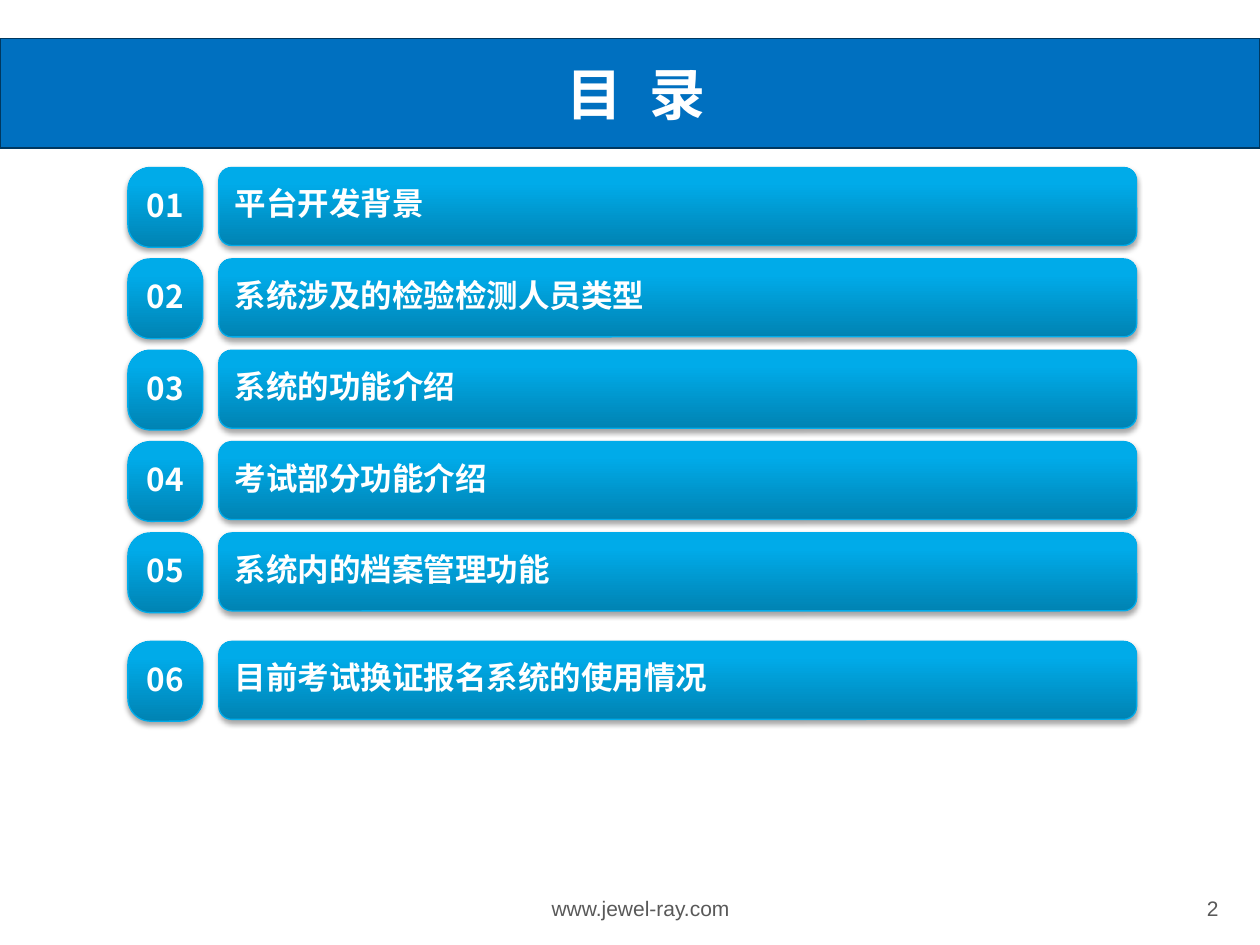
from lxml import etree
from pptx import Presentation
from pptx.dml.color import RGBColor
from pptx.enum.shapes import MSO_SHAPE
from pptx.enum.text import MSO_ANCHOR, PP_ALIGN
from pptx.oxml import parse_xml
from pptx.oxml.ns import nsdecls, qn
from pptx.util import Pt

RECT, ROUNDED = MSO_SHAPE.RECTANGLE, MSO_SHAPE.ROUNDED_RECTANGLE
MIDDLE, BOTTOM = MSO_ANCHOR.MIDDLE, MSO_ANCHOR.BOTTOM
LEFT, CENTER, RIGHT = PP_ALIGN.LEFT, PP_ALIGN.CENTER, PP_ALIGN.RIGHT

WHITE = RGBColor(0xFF, 0xFF, 0xFF)
GREY = RGBColor(0x59, 0x59, 0x59)
BAND_FILL = RGBColor(0x00, 0x70, 0xC0)
BAND_LINE = RGBColor(0x00, 0x38, 0x60)
TILE_LINE = RGBColor(0x00, 0xAC, 0xEB)
TILE_STOPS = [
    (0, RGBColor(0x00, 0x83, 0xB3)),
    (80, RGBColor(0x00, 0xAB, 0xE9)),
    (100, RGBColor(0x00, 0xAB, 0xEA)),
]

SANS, CJK, DISPLAY = "Arial", "Noto Sans CJK SC", "Montserrat"

TITLE = ["目", " ", "录"]
TITLE_GAP = Pt(8)
TOPICS = [
    ("平台开发背景", SANS),
    ("系统涉及的检验检测人员类型", SANS),
    ("系统的功能介绍", SANS),
    ("考试部分功能介绍", CJK),
    ("系统内的档案管理功能", CJK),
    ("目前考试换证报名系统的使用情况", CJK),
]
FOOTERS = [
    ("www.jewel-ray.com", CENTER, (253.4, 508.3, 225.4, 21.6)),
    ("2", RIGHT, (669.6, 507.6, 33.8, 22.3)),
]

PAGE_WIDTH, PAGE_HEIGHT = 720, 540
FIRST_TOP, ROW_PITCH, LAST_ROW_GAP = 95.7, 52.2, 9.8
NUMBER_LEFT, NUMBER_WIDTH, NUMBER_HEIGHT = 73.1, 42.8, 45.6
BAR_LEFT, BAR_WIDTH, BAR_HEIGHT = 125, 524.5, 44.6


def place(left, top, width, height):
    return Pt(left), Pt(top), Pt(width), Pt(height)


def set_insets(frame, left, top, right, bottom):
    frame.margin_left, frame.margin_top = Pt(left), Pt(top)
    frame.margin_right, frame.margin_bottom = Pt(right), Pt(bottom)


def add_span(para, text, size, font, color, bold=False):
    span = para.add_run()
    span.text = text
    span.font.size = Pt(size)
    span.font.name = font
    span.font.bold = bold
    span.font.color.rgb = color
    etree.SubElement(span.font._element, qn("a:ea"), typeface=CJK)
    return span


def add_tile(page, area, text, font, align, insets):
    tile = page.shapes.add_shape(ROUNDED, *place(*area))
    tile.line.color.rgb = TILE_LINE
    tile.line.width = Pt(0.75)
    tile.shadow.inherit = False
    properties = tile.element.spPr
    stops = "".join(
        f'<a:gs pos="{position * 1000}"><a:srgbClr val="{color}"/></a:gs>'
        for position, color in TILE_STOPS
    )
    properties.find(qn("a:prstGeom")).addnext(parse_xml(
        f'<a:gradFill {nsdecls("a")} rotWithShape="1"><a:gsLst>{stops}</a:gsLst>'
        '<a:lin ang="16200000" scaled="0"/></a:gradFill>'
    ))
    properties.find(qn("a:effectLst")).append(parse_xml(
        f'<a:outerShdw {nsdecls("a")} blurRad="{Pt(3.1)}" dist="{Pt(1.8)}" '
        'dir="5400000" rotWithShape="0"><a:srgbClr val="000000">'
        '<a:alpha val="35000"/></a:srgbClr></a:outerShdw>'
    ))
    frame = tile.text_frame
    frame.word_wrap = True
    frame.vertical_anchor = MIDDLE
    set_insets(frame, *insets)
    para = frame.paragraphs[0]
    para.alignment = align
    add_span(para, text, 18, font, WHITE, True)
    return tile


def add_heading(page):
    title = page.shapes.title
    title.left, title.top, title.width, title.height = place(31, 24.5, 658, 56.9)
    frame = title.text_frame
    frame.vertical_anchor = MIDDLE
    set_insets(frame, 14.4, 3.6, 7.2, 3.6)
    para = frame.paragraphs[0]
    para.alignment = CENTER
    for text in TITLE:
        span = add_span(para, text, 32, DISPLAY, WHITE, True)
        if text == " ":
            span.font._element.set("spc", str(int(TITLE_GAP.pt * 100)))

    band = page.shapes.add_shape(RECT, *place(0, 22.1, PAGE_WIDTH, 62.6))
    band.fill.solid()
    band.fill.fore_color.rgb = BAND_FILL
    band.line.color.rgb = BAND_LINE
    band.line.width = Pt(0.75)
    band.shadow.inherit = False
    title.element.addprevious(band.element)


def add_topics(page):
    for index, (topic, font) in enumerate(TOPICS):
        top = FIRST_TOP + index * ROW_PITCH
        if index == len(TOPICS) - 1:
            top += LAST_ROW_GAP
        number = add_tile(
            page, (NUMBER_LEFT, top, NUMBER_WIDTH, NUMBER_HEIGHT),
            f"{index + 1:02}", CJK, CENTER, (2.9, 0, 2.9, 2.9),
        )
        number.adjustments[0] = 0.302
        add_tile(
            page, (BAR_LEFT, top, BAR_WIDTH, BAR_HEIGHT),
            topic, font, LEFT, (7.2, 0, 7.2, 3.6),
        )


def add_footers(page):
    for text, align, area in FOOTERS:
        box = page.shapes.add_textbox(*place(*area))
        frame = box.text_frame
        frame.word_wrap = True
        frame.vertical_anchor = BOTTOM
        para = frame.paragraphs[0]
        para.alignment = align
        add_span(para, text, 12, SANS, GREY)


def main():
    deck = Presentation()
    deck.slide_width, deck.slide_height = Pt(PAGE_WIDTH), Pt(PAGE_HEIGHT)
    page = deck.slides.add_slide(deck.slide_layouts[5])
    add_heading(page)
    add_topics(page)
    add_footers(page)
    deck.save("out.pptx")


if __name__ == "__main__":
    main()
